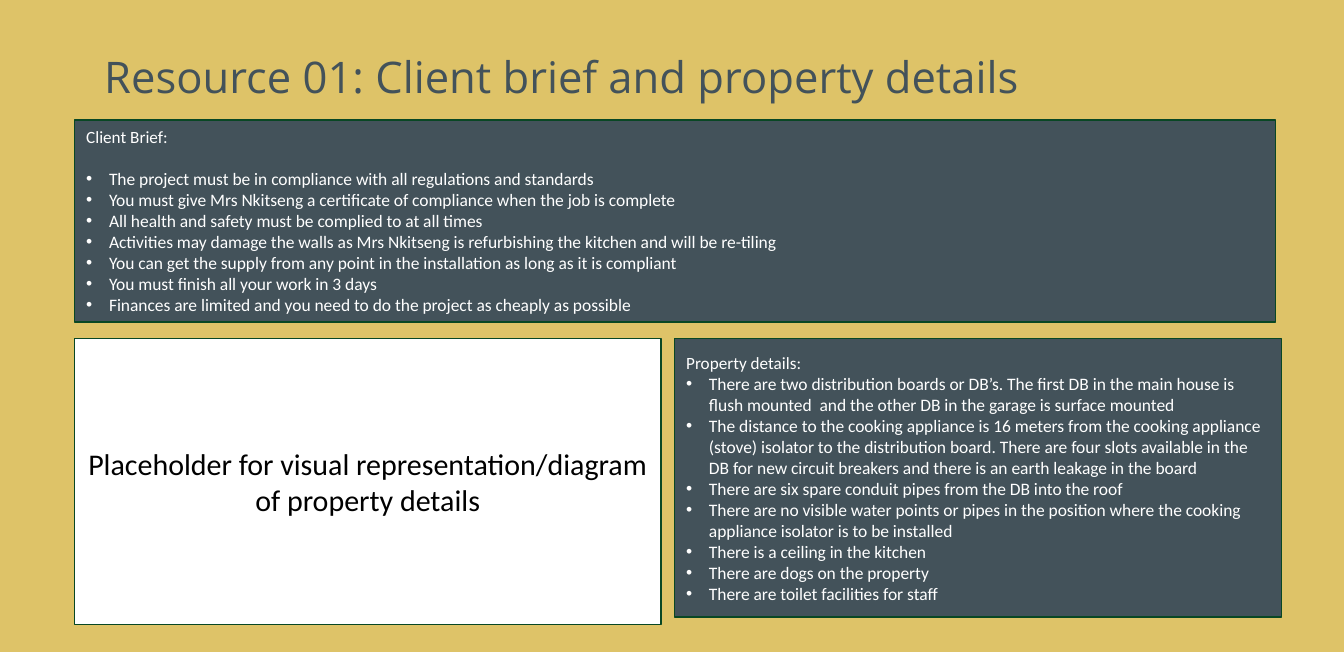
from lxml.etree import SubElement
from pptx import Presentation
from pptx.dml.color import RGBColor
from pptx.enum.shapes import MSO_SHAPE
from pptx.enum.text import MSO_ANCHOR, PP_ALIGN
from pptx.oxml.ns import qn
from pptx.util import Inches, Pt

COLORS = {
    "background": "DEC368",
    "slate": "43525A",
    "border": "094724",
    "white": "FFFFFF",
    "black": "000000",
}

CLIENT_BRIEF = [
    "The project must be in compliance with all regulations and standards",
    "You must give Mrs Nkitseng a certificate of compliance when the job is complete",
    "All health and safety must be complied to at all times",
    "Activities may damage the walls as Mrs Nkitseng is refurbishing the kitchen and will be re-tiling",
    "You can get the supply from any point in the installation as long as it is compliant",
    "You must finish all your work in 3 days",
    "Finances are limited and you need to do the project as cheaply as possible",
]

PROPERTY_DETAILS = [
    "There are two distribution boards or DB’s. The first DB in the main house is  "
    "flush mounted  and the other DB in the garage is surface mounted",
    "The distance to the cooking appliance is 16 meters from the cooking appliance (stove) isolator "
    "to the distribution board. There are four slots available in the DB for new circuit breakers "
    "and there is an earth leakage in the board",
    "There are six spare conduit pipes from the DB into the roof",
    "There are no visible water points or pipes in the position where the cooking appliance "
    "isolator is to be installed",
    "There is a ceiling in the kitchen",
    "There are dogs on the property",
    "There are toilet facilities for staff",
]


def color(name):
    return RGBColor.from_string(COLORS[name])


def style_text(paragraph, text, size, color_name, font_name="Calibri", alignment=PP_ALIGN.LEFT):
    paragraph.text = text
    paragraph.alignment = alignment
    paragraph.font.name = font_name
    paragraph.font.size = Pt(size)
    paragraph.font.color.rgb = color(color_name)


def add_bullet(paragraph):
    properties = paragraph._p.get_or_add_pPr()
    properties.set("marL", str(Inches(0.19)))
    properties.set("indent", str(Inches(-0.19)))
    SubElement(properties, qn("a:buFont"), typeface="Arial")
    SubElement(properties, qn("a:buChar"), char="•")


def add_title(slide, box, text):
    title = slide.shapes.add_textbox(*map(Inches, box))
    frame = title.text_frame
    frame.word_wrap = True
    frame.vertical_anchor = MSO_ANCHOR.MIDDLE
    paragraph = frame.paragraphs[0]
    style_text(paragraph, text, 26.1, "slate", "Open Sans")
    paragraph.line_spacing = 0.9


def add_panel(slide, box, fill_name):
    panel = slide.shapes.add_shape(MSO_SHAPE.RECTANGLE, *map(Inches, box))
    panel.shadow.inherit = False
    panel.fill.solid()
    panel.fill.fore_color.rgb = color(fill_name)
    panel.line.color.rgb = color("border")
    panel.line.width = Pt(1)
    panel.text_frame.word_wrap = True
    panel.text_frame.vertical_anchor = MSO_ANCHOR.MIDDLE
    return panel.text_frame


def add_list_panel(slide, box, heading, items, heading_gap=0):
    frame = add_panel(slide, box, "slate")
    style_text(frame.paragraphs[0], heading, 10.3, "white")
    frame.paragraphs[0].space_after = Pt(heading_gap)
    for item in items:
        paragraph = frame.add_paragraph()
        style_text(paragraph, item, 10.5, "white")
        add_bullet(paragraph)


def add_diagram_panel(slide, box, text):
    frame = add_panel(slide, box, "white")
    style_text(frame.paragraphs[0], text, 18, "black", alignment=PP_ALIGN.CENTER)


def main():
    presentation = Presentation()
    presentation.slide_width = Inches(11.2)
    presentation.slide_height = Inches(5.43)
    slide = presentation.slides.add_slide(presentation.slide_layouts[6])
    slide.background.fill.solid()
    slide.background.fill.fore_color.rgb = color("background")

    left, lower_top = 0.62, 2.82
    add_title(slide, (0.77, 0.14, 9.66, 1.05), "Resource 01: Client brief and property details")
    add_list_panel(slide, (left, 1, 10.01, 1.68), "Client Brief:", CLIENT_BRIEF, heading_gap=12.6)
    add_list_panel(slide, (5.62, lower_top, 5.06, 2.32), "Property details:", PROPERTY_DETAILS)
    add_diagram_panel(slide, (left, lower_top, 4.89, 2.38),
                      "Placeholder for visual representation/diagram of property details")
    presentation.save("out.pptx")


if __name__ == "__main__":
    main()
